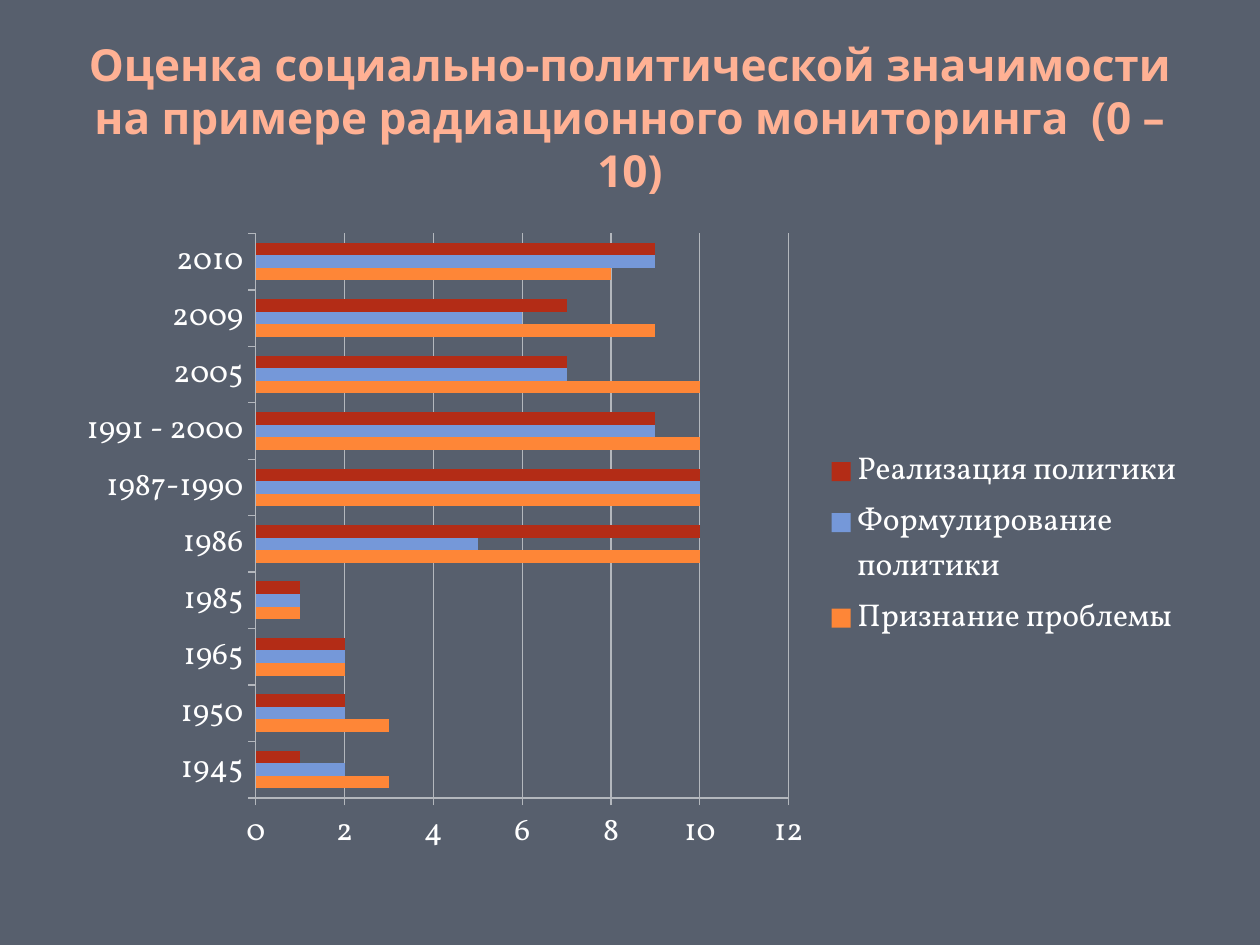
from lxml import etree
from pptx import Presentation
from pptx.chart.data import CategoryChartData
from pptx.dml.color import RGBColor
from pptx.enum import chart as ch, text
from pptx.util import Pt

BACK = RGBColor(0x57, 0x5F, 0x6D)
PEACH = RGBColor(0xFF, 0xB1, 0x94)
WHITE = RGBColor(0xFF, 0xFF, 0xFF)
GRID = RGBColor(0xB3, 0xB7, 0xBD)
ORANGE = RGBColor(0xFE, 0x86, 0x37)
BLUE = RGBColor(0x75, 0x98, 0xD9)
RED = RGBColor(0xB3, 0x2C, 0x16)

YEARS = ["1945", "1950", "1965", "1985", "1986", "1987-1990",
         "1991 - 2000", "2005", "2009", "2010"]
SERIES = [
    ("Признание проблемы", ORANGE, (3, 3, 2, 1, 10, 10, 10, 10, 9, 8)),
    ("Формулирование политики", BLUE, (2, 2, 2, 1, 5, 10, 9, 7, 6, 9)),
    ("Реализация политики", RED, (1, 2, 2, 1, 10, 10, 9, 7, 7, 9)),
]


def style(font, **form):
    for key, val in form.items():
        if key == "color":
            font.color.rgb = val
        else:
            setattr(font, key, val)


deck = Presentation()
deck.slide_width, deck.slide_height = Pt(720), Pt(540)
slide = deck.slides.add_slide(deck.slide_layouts[6])
slide.background.fill.solid()
slide.background.fill.fore_color.rgb = BACK

# Title
title = slide.shapes.add_textbox(Pt(36), Pt(21.6), Pt(648), Pt(90))
frame = title.text_frame
frame.word_wrap = True
frame.vertical_anchor = text.MSO_ANCHOR.MIDDLE
para = frame.paragraphs[0]
para.alignment = text.PP_ALIGN.CENTER
run = para.add_run()
run.text = ("Оценка социально-политической значимости на примере "
            "радиационного мониторинга  (0 –10)")
style(run.font, name="Open Sans", size=Pt(25.2), bold=True, color=PEACH)

# Bar chart
data = CategoryChartData(number_format="General")
data.categories = YEARS
for name, _, vals in SERIES:
    data.add_series(name, vals)
chart = slide.shapes.add_chart(ch.XL_CHART_TYPE.BAR_CLUSTERED, Pt(36), Pt(126),
                               Pt(648), Pt(370.8), data).chart
style(chart.font, name="Vollkorn", size=Pt(18), color=WHITE)
chart.has_title = False
chart.has_legend = True
chart.legend.position = ch.XL_LEGEND_POSITION.RIGHT
chart.legend.include_in_layout = False

plot = chart.plots[0]
plot.gap_width, plot.overlap = 150, 0
plot.vary_by_categories = False
for bar, (_, color, _) in zip(plot.series, SERIES):
    bar.format.fill.solid()
    bar.format.fill.fore_color.rgb = color

scale = chart.value_axis
scale.minimum_scale, scale.maximum_scale, scale.major_unit = 0, 12, 2
scale.has_major_gridlines = True
chart.category_axis.has_major_gridlines = False
for axis in (scale, chart.category_axis):
    axis.major_tick_mark = ch.XL_TICK_MARK.OUTSIDE
    axis.minor_tick_mark = ch.XL_TICK_MARK.NONE
for part in (scale, chart.category_axis, scale.major_gridlines):
    part.format.line.color.rgb = GRID
    part.format.line.width = Pt(0.75)

# Inner plot area, as shares of the chart frame
area = chart._chartSpace.chart.plotArea
NS = area.nsmap["c"]
for old in area.findall(f"{{{NS}}}layout"):
    area.remove(old)
layout = etree.Element(f"{{{NS}}}layout")
manual = etree.SubElement(layout, f"{{{NS}}}manualLayout")
for tag, val in (("layoutTarget", "inner"), ("xMode", "edge"), ("yMode", "edge"),
                 ("x", "0.17"), ("y", "0.02"), ("w", "0.47"), ("h", "0.87")):
    etree.SubElement(manual, f"{{{NS}}}{tag}").set("val", val)
area.insert(0, layout)

deck.save("out.pptx")
